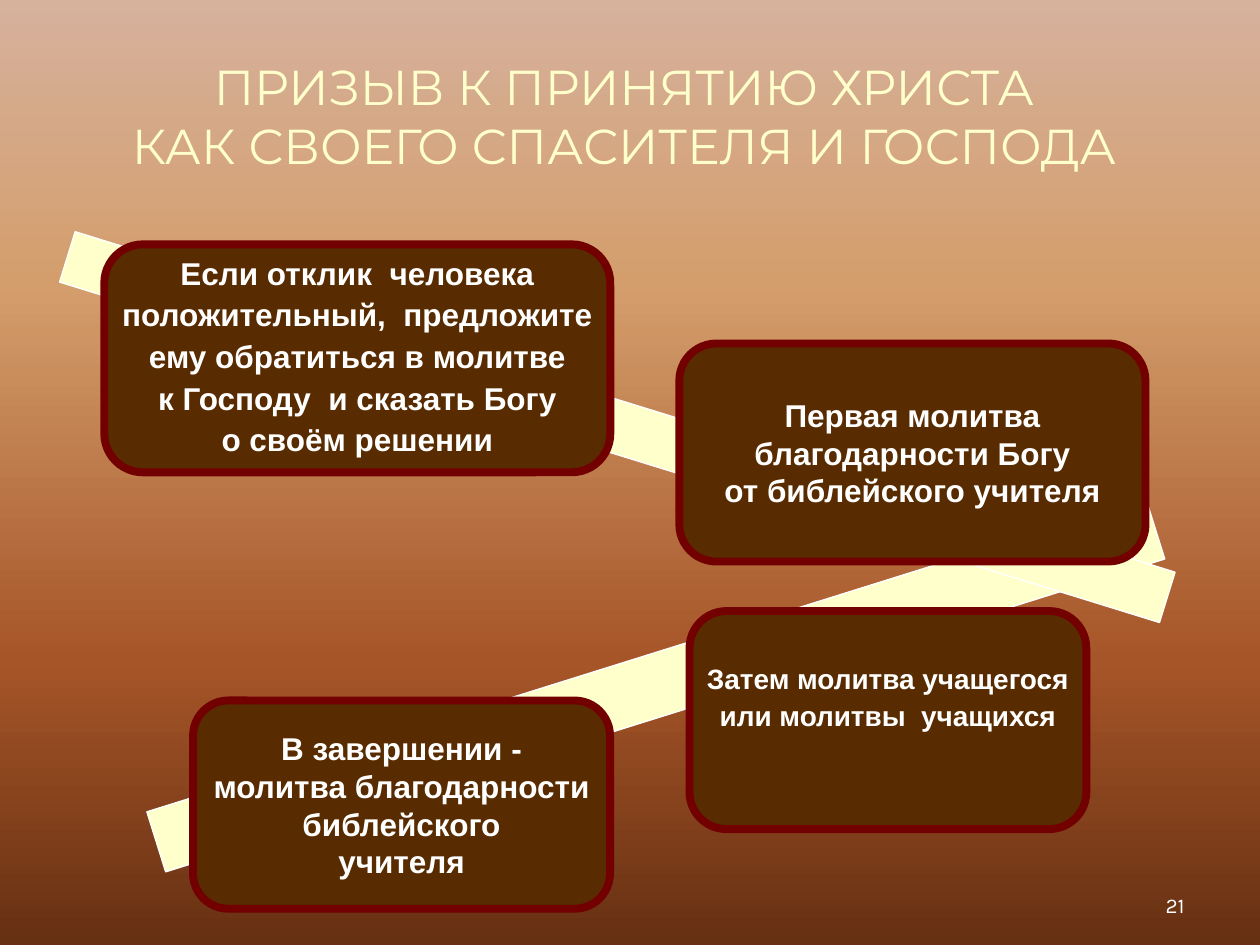
from copy import deepcopy

from pptx import Presentation
from pptx.dml.color import RGBColor
from pptx.enum.shapes import MSO_SHAPE as Shape
from pptx.enum.text import MSO_ANCHOR as Anchor, PP_ALIGN as Align
from pptx.oxml.ns import qn
from pptx.util import Pt

CREAM = RGBColor(0xFF, 0xFF, 0xCC)
WHITE = RGBColor(0xFF, 0xFF, 0xFF)
BROWN = RGBColor(0x58, 0x2C, 0x00)
MAROON = RGBColor(0x72, 0x00, 0x00)
BACKGROUND_STOPS = [
    (0, RGBColor(0xD6, 0xB1, 0x9C)),
    (0.3, RGBColor(0xD4, 0x9E, 0x6C)),
    (0.7, RGBColor(0xA6, 0x55, 0x28)),
    (1, RGBColor(0x66, 0x30, 0x12)),
]


def paint_background(slide):
    fill = slide.background.fill
    fill.gradient()
    fill.gradient_angle = 270
    stop_list = next(slide.element.iter(qn("a:gsLst")))
    while len(stop_list) < len(BACKGROUND_STOPS):
        stop_list.append(deepcopy(stop_list[0]))
    for stop, (position, color) in zip(fill.gradient_stops, BACKGROUND_STOPS):
        stop.position = position
        stop.color.rgb = color


def write_lines(frame, lines, font_name, size, color, align, bold=False):
    """Fill a text frame with one paragraph for each line."""
    for index, line in enumerate(lines):
        paragraph = frame.paragraphs[0] if index == 0 else frame.add_paragraph()
        paragraph.text = line
        paragraph.alignment = align
        font = paragraph.font
        font.name, font.size, font.bold = font_name, Pt(size), bold
        font.color.rgb = color


def add_label(slide, box, text, font_name, size, color, align, anchor):
    frame = slide.shapes.add_textbox(*map(Pt, box)).text_frame
    frame.word_wrap = True
    frame.vertical_anchor = anchor
    write_lines(frame, [text], font_name, size, color, align)


def add_filled_shape(slide, kind, box, fill, line, line_width):
    shape = slide.shapes.add_shape(kind, *map(Pt, box))
    shape.shadow.inherit = False
    shape.fill.solid()
    shape.fill.fore_color.rgb = fill
    shape.line.color.rgb = line
    shape.line.width = Pt(line_width)
    return shape


def add_path_bar(slide, box, rotation):
    bar = add_filled_shape(slide, Shape.RECTANGLE, box, CREAM, WHITE, 0.75)
    bar.rotation = rotation


def add_step(slide, box, lines, size=18, gap=0, lift=0):
    """Add a step card; gap loosens its lines and lift raises its text."""
    card = add_filled_shape(slide, Shape.ROUNDED_RECTANGLE, box, BROWN, MAROON, 4.5)
    card.adjustments[0] = 0.17
    frame = card.text_frame
    frame.word_wrap = False
    frame.vertical_anchor = Anchor.MIDDLE
    frame.margin_bottom = Pt(3.6 + 2 * lift)
    write_lines(frame, lines, "Arial", size, WHITE, Align.CENTER, bold=True)
    if gap:
        for index, paragraph in enumerate(frame.paragraphs):
            paragraph.line_spacing = 0.9
            paragraph.space_before = Pt(gap if index else 0)


def main():
    presentation = Presentation()
    presentation.slide_width, presentation.slide_height = Pt(720), Pt(540)
    slide = presentation.slides.add_slide(presentation.slide_layouts[6])
    paint_background(slide)

    add_label(slide, (516, 492, 168, 36), "21", "Karla", 12, WHITE,
              Align.RIGHT, Anchor.BOTTOM)
    add_label(slide, (25, 15, 663, 102),
              "ПРИЗЫВ К ПРИНЯТИЮ ХРИСТА\vКАК СВОЕГО СПАСИТЕЛЯ И ГОСПОДА",
              "Montserrat", 28, CREAM, Align.CENTER, Anchor.MIDDLE)

    add_path_bar(slide, (75.6, 373.7, 598.3, 36), 342.6)
    add_path_bar(slide, (23.8, 229, 658, 30.2), 17.2)

    add_step(slide, (110.3, 400.3, 238.3, 119),
             ["В завершении -", "молитва благодарности", "библейского", "учителя"])
    add_step(slide, (394, 349.2, 226.8, 124.6),
             ["Затем молитва учащегося", "или молитвы  учащихся"],
             size=16, gap=4, lift=12)
    add_step(slide, (388.2, 196.3, 266.4, 124.6),
             ["Первая молитва", "благодарности Богу", "от библейского учителя"])
    add_step(slide, (59.6, 139.6, 289.2, 130.3),
             ["Если отклик  человека", "положительный,  предложите",
              "ему обратиться в молитве", "к Господу  и сказать Богу",
              "о своём решении"], gap=4.4)

    presentation.save("out.pptx")


if __name__ == "__main__":
    main()
